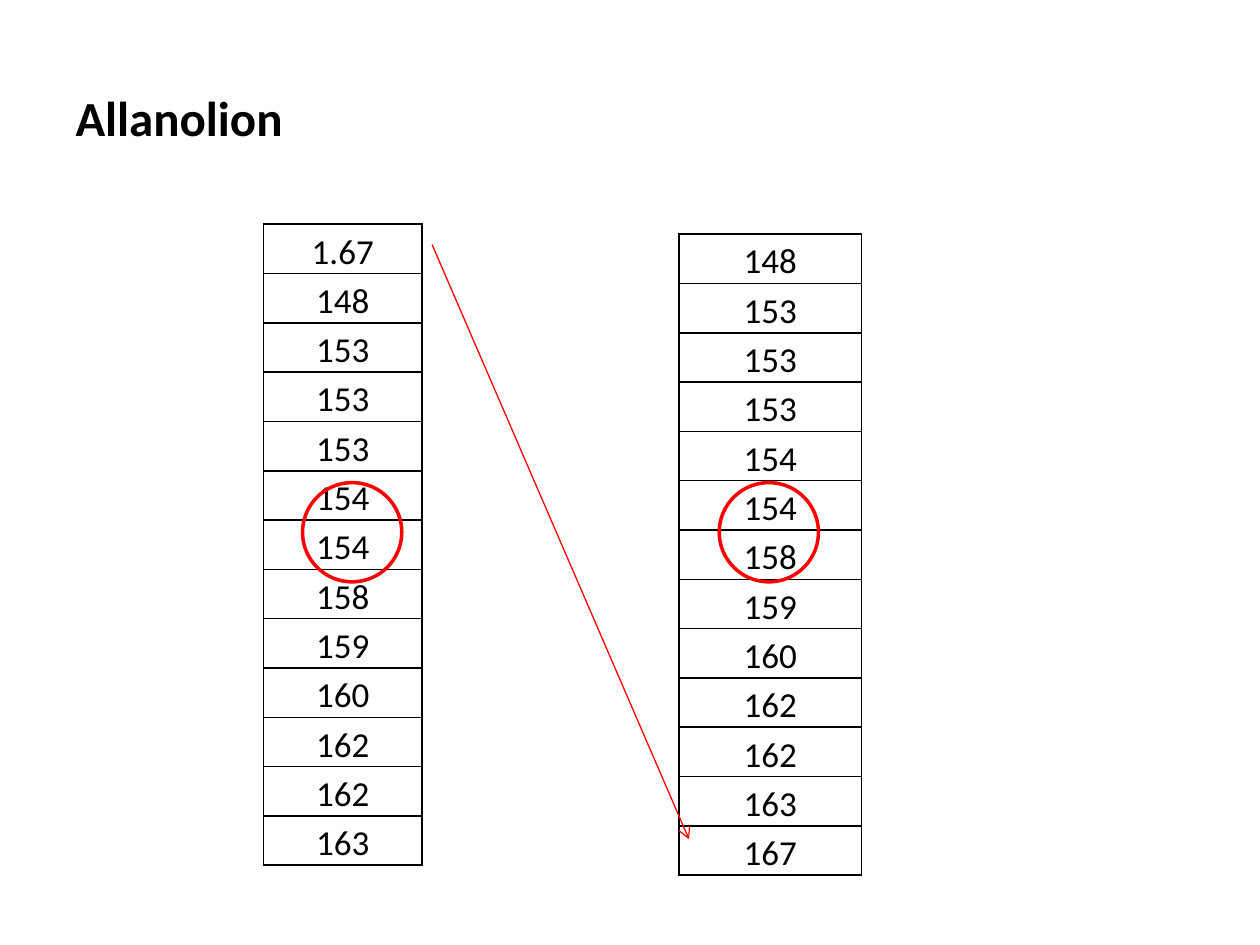
import lxml.etree
import pptx
import pptx.dml.color
import pptx.enum.shapes
import pptx.enum.text
import pptx.oxml.ns
import pptx.util

Cm = pptx.util.Cm
Pt = pptx.util.Pt
qn = pptx.oxml.ns.qn
SHAPES = pptx.enum.shapes
TEXT = pptx.enum.text

BLACK = pptx.dml.color.RGBColor(0x00, 0x00, 0x00)
RED = pptx.dml.color.RGBColor(0xFF, 0x00, 0x00)


def set_font(font, size, bold):
    formats = {"name": "Calibri", "size": Pt(size), "bold": bold}
    for attribute, value in formats.items():
        setattr(font, attribute, value)
    font.color.rgb = BLACK


def add_borders(cell):
    """Draw a 1 pt black line on every side of the cell."""
    properties = cell._tc.get_or_add_tcPr()
    for side in ("a:lnL", "a:lnR", "a:lnT", "a:lnB"):
        border = lxml.etree.SubElement(properties, qn(side), w=str(Pt(1)))
        fill = lxml.etree.SubElement(border, qn("a:solidFill"))
        lxml.etree.SubElement(fill, qn("a:srgbClr"), val=str(BLACK))


presentation = pptx.Presentation()
presentation.slide_width = Cm(25.4)
presentation.slide_height = Cm(19.05)
slide = presentation.slides.add_slide(presentation.slide_layouts[5])

# Title
title = slide.shapes.title
title_place = {"left": Cm(1.27), "top": Cm(0.76), "width": Cm(22.86), "height": Cm(3.18)}
for attribute, value in title_place.items():
    setattr(title, attribute, value)
title.text_frame.text = "Allanolion"
title.text_frame.vertical_anchor = TEXT.MSO_ANCHOR.MIDDLE
heading = title.text_frame.paragraphs[0]
heading.alignment = TEXT.PP_ALIGN.LEFT
set_font(heading.runs[0].font, 28, True)

# Heights before and after the first value moves to the end
sorted_heights = "148 153 153 153 154 154 158 159 160 162 162 163".split()
columns = [
    (["1.67"] + sorted_heights, 5.31, 4.52, 3.2, 0.94),
    (sorted_heights + ["167"], 13.69, 4.72, 3.68, 0.86),
]
cell_format = {
    "margin_left": Cm(0.18),
    "margin_right": Cm(0.18),
    "margin_top": 0,
    "margin_bottom": 0,
    "vertical_anchor": TEXT.MSO_ANCHOR.BOTTOM,
}
for heights, left, top, width, row_height in columns:
    frame = slide.shapes.add_table(
        len(heights), 1, Cm(left), Cm(top), Cm(width), Cm(12.65)
    )
    frame.table.first_row = False
    frame.table.horz_banding = False
    for row, height in zip(frame.table.rows, heights):
        row.height = Cm(row_height)
        cell = row.cells[0]
        cell.text = height
        for attribute, value in cell_format.items():
            setattr(cell, attribute, value)
        add_borders(cell)
        cell.fill.background()
        paragraph = cell.text_frame.paragraphs[0]
        paragraph.alignment = TEXT.PP_ALIGN.CENTER
        paragraph.line_spacing = 1.15
        set_font(paragraph.runs[0].font, 20, False)
    frame.height = Cm(12.65)

# Circles around the middle values
for left in (6.1, 14.5):
    circle = slide.shapes.add_shape(
        SHAPES.MSO_SHAPE.OVAL, Cm(left), Cm(9.73), Cm(2), Cm(2)
    )
    circle.shadow.inherit = False
    circle.fill.background()
    circle.line.color.rgb = RED
    circle.line.width = Pt(2)

# Arrow from the first place to the last
arrow = slide.shapes.add_connector(
    SHAPES.MSO_CONNECTOR.STRAIGHT, Cm(8.71), Cm(4.93), Cm(13.89), Cm(16.92)
)
arrow.line.color.rgb = RED
arrow.line.width = Pt(0.75)
lxml.etree.SubElement(arrow.line._get_or_add_ln(), qn("a:tailEnd"), type="arrow")
lxml.etree.SubElement(arrow._element.spPr, qn("a:effectLst"))

presentation.save("out.pptx")
